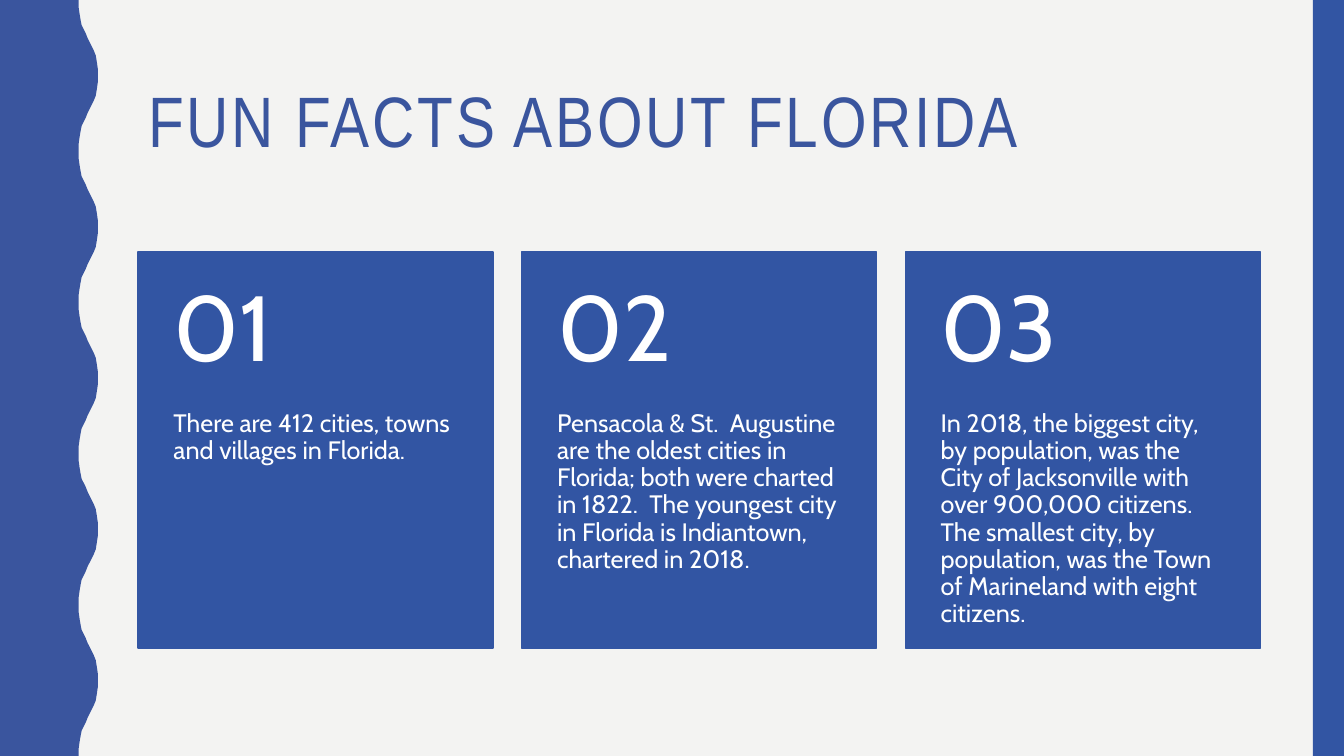
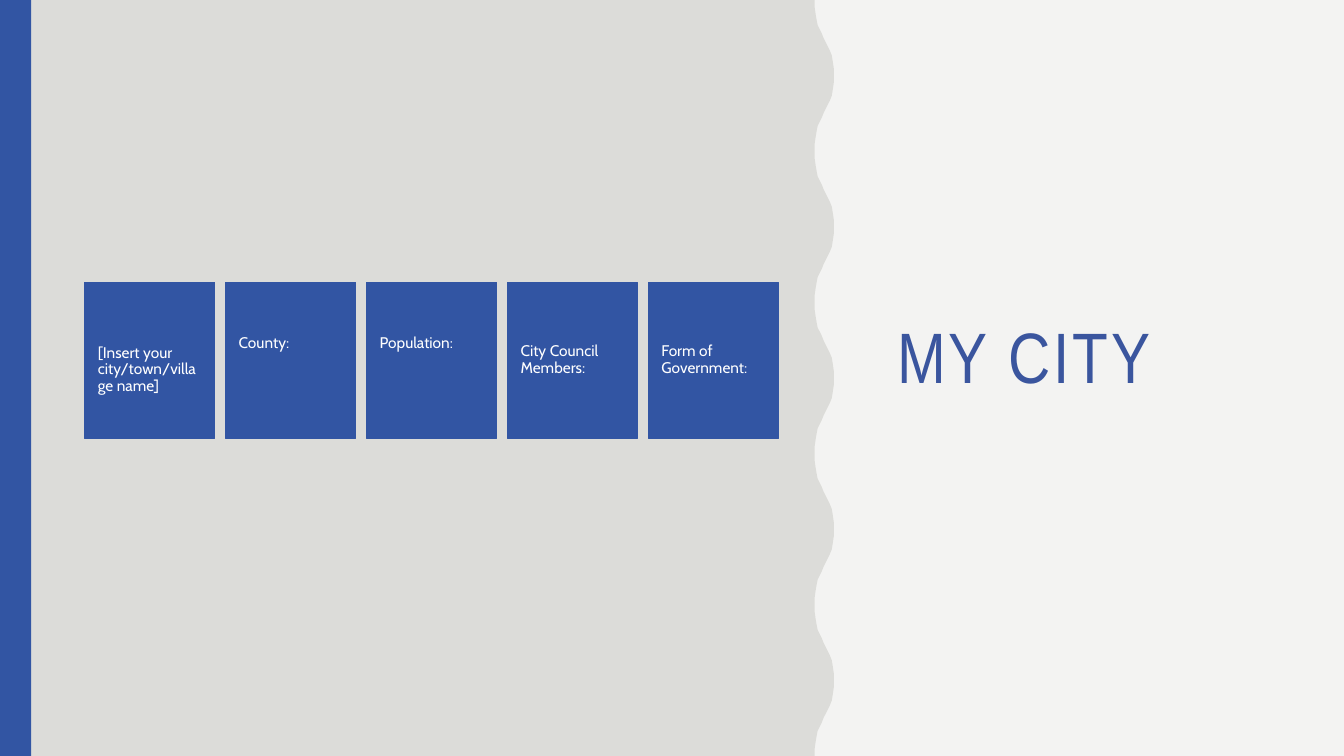
"""Builds two slides about Florida cities and saves them to out.pptx."""
from pptx import Presentation
from pptx.dml.color import RGBColor
from pptx.enum.shapes import MSO_SHAPE
from pptx.enum.text import MSO_ANCHOR
from pptx.util import Inches, Pt

RECT = MSO_SHAPE.RECTANGLE
TOP = MSO_ANCHOR.TOP
MIDDLE = MSO_ANCHOR.MIDDLE

PAPER = RGBColor(0xF3, 0xF3, 0xF2)
BLUE = RGBColor(0x32, 0x55, 0xA3)
INDIGO = RGBColor(0x3A, 0x55, 0x9E)
GREY = RGBColor(0xDC, 0xDC, 0xD9)
WHITE = RGBColor(0xFF, 0xFF, 0xFF)

TITLE_FONT = "Arial Narrow"
BODY_FONT = "Cabin"

SLIDE_W, SLIDE_H = 13.33, 7.5
BAND_W = 0.31
WAVE_PERIOD = 1.5
WAVE_RISE = [(0, 0), (0, 0.07), (0.01, 0.14), (0.02, 0.2), (0.03, 0.25),
             (0.05, 0.29), (0.07, 0.33), (0.09, 0.38), (0.11, 0.42),
             (0.13, 0.46), (0.15, 0.5), (0.17, 0.55), (0.18, 0.61),
             (0.19, 0.68), (0.19, 0.75)]

FACTS = [
    "There are 412 cities, towns and villages in Florida.",
    "Pensacola & St.  Augustine are the oldest cities in Florida; both were "
    "charted in 1822.  The youngest city in Florida is Indiantown, chartered "
    "in 2018.",
    "In 2018, the biggest city, by population, was the City of Jacksonville "
    "with over 900,000 citizens. The smallest city, by population, was the "
    "Town of Marineland with eight citizens.",
]
CITY_FIELDS = ["[Insert your city/town/village name]", "County:",
               "Population:", "City Council Members:", "Form of Government:"]


def paint(sp, color, outlined=False):
    sp.shadow.inherit = False
    sp.fill.solid()
    sp.fill.fore_color.rgb = color
    if outlined:
        sp.line.color.rgb = color
        sp.line.width = Pt(1)
    else:
        sp.line.fill.background()


def add_rect(slide, x, y, w, h, color, outlined=False):
    sp = slide.shapes.add_shape(RECT, Inches(x), Inches(y), Inches(w), Inches(h))
    paint(sp, color, outlined)


def add_text(slide, text, x, y, w, h, size, font=BODY_FONT, color=WHITE,
             anchor=TOP, insets=(0.1, 0.05, 0.1, 0.05), spacing=0):
    sp = slide.shapes.add_textbox(Inches(x), Inches(y), Inches(w), Inches(h))
    tf = sp.text_frame
    tf.word_wrap = True
    tf.vertical_anchor = anchor
    (tf.margin_left, tf.margin_top,
     tf.margin_right, tf.margin_bottom) = [Inches(i) for i in insets]
    p = tf.paragraphs[0]
    p.line_spacing = 0.9
    r = p.add_run()
    r.text = text
    r.font.name = font
    r.font.size = Pt(size)
    r.font.color.rgb = color
    if spacing:
        r.font._element.set("spc", str(spacing * 100))


def add_title(slide, text, x, y, w, h):
    add_text(slide, text, x, y, w, h, 51, font=TITLE_FONT, color=INDIGO,
             anchor=MIDDLE, spacing=2)


def add_wave_panel(slide, width, color):
    fall = [(dx, WAVE_PERIOD - dy) for dx, dy in reversed(WAVE_RISE)]
    wave = WAVE_RISE + fall[1:]
    count = round(SLIDE_H / WAVE_PERIOD)
    edge = [(width + dx, i * WAVE_PERIOD + dy)
            for i in range(count) for dx, dy in wave]
    points = [(Inches(x), Inches(y)) for x, y in edge + [(0, SLIDE_H)]]
    fb = slide.shapes.build_freeform(0, 0)
    fb.add_line_segments(points, close=True)
    paint(fb.convert_to_shape(), color)


def card_lefts(left, right, width, count):
    pitch = (right - left - width) / (count - 1)
    return [left + i * pitch for i in range(count)]


def add_card(slide, text, x, y, w, h, size, inset, number=None):
    head = 0.4 * h
    add_rect(slide, x, y, w, h, BLUE, outlined=True)
    add_text(slide, text, x, y + head, w, h - head, size,
             insets=(inset, 0, inset, 0.36))
    if number:
        add_text(slide, number, x, y, w, head, 66, anchor=MIDDLE,
                 insets=(inset, 0.18, inset, 0.18))


def build_facts(slide):
    add_wave_panel(slide, 0.78, INDIGO)
    add_rect(slide, SLIDE_W - BAND_W, 0, BAND_W, SLIDE_H, BLUE)
    add_title(slide, "FUN FACTS ABOUT FLORIDA", 1.37, 0.42, 11.13, 1.63)
    lefts = card_lefts(1.37, 12.5, 3.52, len(FACTS))
    for i, (x, fact) in enumerate(zip(lefts, FACTS), 1):
        add_card(slide, fact, x, 2.5, 3.52, 3.93, 18, 0.35, number=f"{i:02d}")


def build_city(slide):
    add_title(slide, "MY CITY", 8.8, 0.53, 4, 6.09)
    add_wave_panel(slide, 8.08, GREY)
    add_rect(slide, 0, 0, BAND_W, SLIDE_H, BLUE)
    lefts = card_lefts(0.84, 7.72, 1.29, len(CITY_FIELDS))
    for x, field in zip(lefts, CITY_FIELDS):
        add_card(slide, field, x, 2.8, 1.29, 1.55, 11, 0.13)


def main():
    prs = Presentation()
    prs.slide_width = Inches(SLIDE_W)
    prs.slide_height = Inches(SLIDE_H)
    fill = prs.slide_master.background.fill
    fill.solid()
    fill.fore_color.rgb = PAPER
    for build in (build_facts, build_city):
        build(prs.slides.add_slide(prs.slide_layouts[6]))
    prs.save("out.pptx")


if __name__ == "__main__":
    main()
